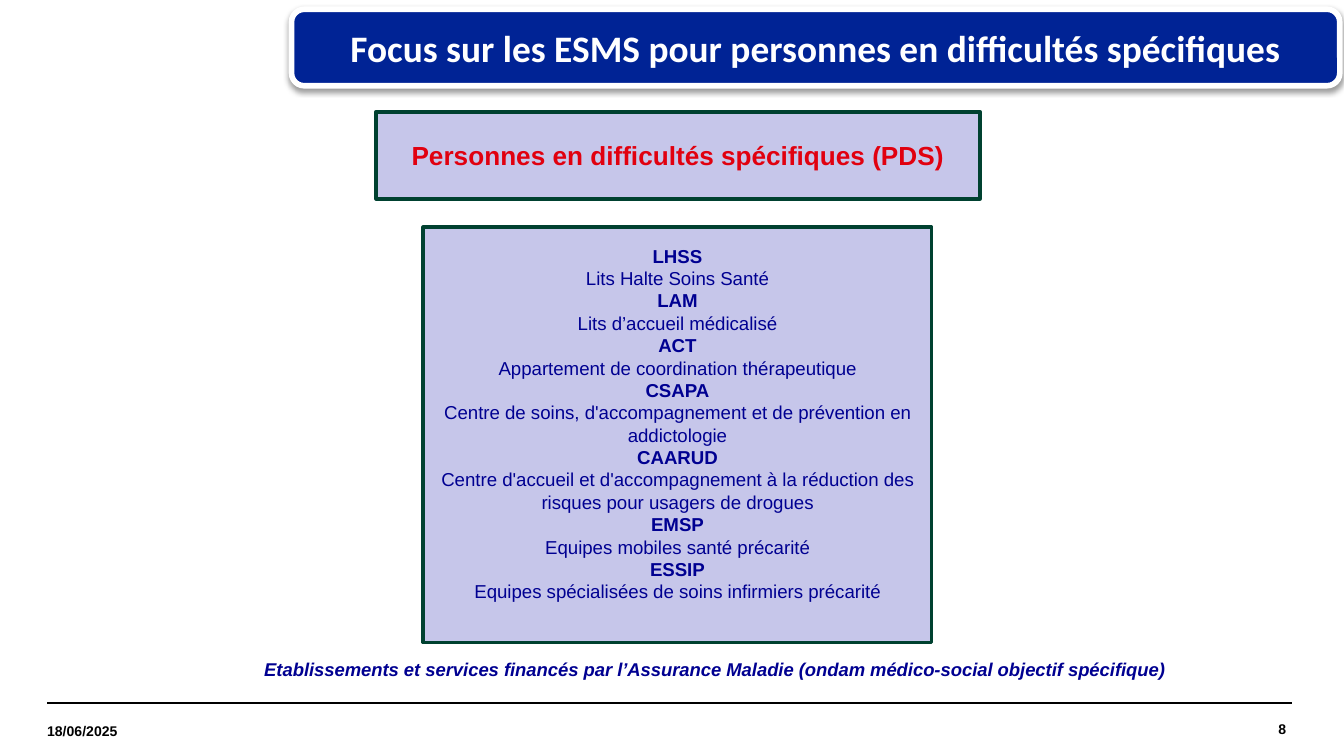
from pptx import Presentation
from pptx.dml.color import RGBColor
from pptx.enum import shapes, text
from pptx.oxml import parse_xml
from pptx.oxml.ns import nsdecls, qn
from pptx.util import Pt

THEME = {
    "font": "Arial", "title_font": "Calibri",
    "banner": "002395", "white": "FFFFFF", "panel": "C6C6EA", "border": "004130",
    "red": "E1000F", "navy": "000091", "black": "000000",
    "title": 20, "heading": 14, "body": 10, "note": 9.9, "footer": 7.5,
}
TITLE = "Focus sur les ESMS pour personnes en difficultés spécifiques"
HEADING = "Personnes en difficultés spécifiques (PDS)"
SERVICES = [
    ("LHSS", "Lits Halte Soins Santé"),
    ("LAM", "Lits d’accueil médicalisé"),
    ("ACT", "Appartement de coordination thérapeutique"),
    ("CSAPA", "Centre de soins, d'accompagnement et de prévention en addictologie"),
    ("CAARUD", "Centre d'accueil et d'accompagnement à la réduction des risques "
               "pour usagers de drogues"),
    ("EMSP", "Equipes mobiles santé précarité"),
    ("ESSIP", "Equipes spécialisées de soins infirmiers précarité"),
]
NOTE = ("Etablissements et services financés par l’Assurance Maladie "
        "(ondam médico-social objectif spécifique)")
DATE, PAGE = "18/06/2025", "8"
CENTER, LEFT, RIGHT = text.PP_ALIGN.CENTER, text.PP_ALIGN.LEFT, text.PP_ALIGN.RIGHT


def rgb(name):
    return RGBColor.from_string(THEME[name])


def write(sp, lines, size, color, align=CENTER, font="font", italic=False):
    """Fill a shape with (text, bold) lines in one style."""
    tf = sp.text_frame
    tf.word_wrap = True
    tf.vertical_anchor = text.MSO_ANCHOR.MIDDLE
    tf.text = "\n".join(line for line, _ in lines)
    for p, (_, bold) in zip(tf.paragraphs, lines):
        p.alignment = align
        for r in p.runs:
            r.font.name, r.font.size = THEME[font], Pt(THEME[size])
            r.font.bold, r.font.italic = bold, italic
            r.font.color.rgb = rgb(color)
    return tf


def add_box(slide, kind, box, fill, line, width):
    sp = slide.shapes.add_shape(kind, *map(Pt, box))
    sp.shadow.inherit = False
    sp.fill.solid()
    sp.fill.fore_color.rgb = rgb(fill)
    sp.line.color.rgb = rgb(line)
    sp.line.width = Pt(width)
    return sp


def add_text(slide, box, *args, inset=True, **style):
    sp = slide.shapes.add_textbox(*map(Pt, box))
    tf = write(sp, *args, **style)
    if not inset:
        tf.margin_left = tf.margin_right = tf.margin_top = tf.margin_bottom = 0
    return tf


def add_rule(slide, x1, x2, y):
    line = slide.shapes.add_connector(shapes.MSO_CONNECTOR.STRAIGHT, Pt(x1), Pt(y), Pt(x2), Pt(y))
    line.line.color.rgb = rgb("black")
    line.line.width = Pt(0.8)
    line._element.spPr.append(parse_xml(f"<a:effectLst {nsdecls('a')}/>"))


def add_shadow(sp):
    effects = sp._element.spPr.find(qn("a:effectLst"))
    effects.append(parse_xml(
        f'<a:outerShdw {nsdecls("a")} blurRad="{Pt(3.1)}" dist="{Pt(1.6)}" dir="5400000">'
        f'<a:srgbClr val="{THEME["black"]}"><a:alpha val="38000"/></a:srgbClr></a:outerShdw>'))


def main():
    prs = Presentation()
    prs.slide_width, prs.slide_height = Pt(720), Pt(405)
    s = prs.slides.add_slide(prs.slide_layouts[6])
    rect, rounded = shapes.MSO_SHAPE.RECTANGLE, shapes.MSO_SHAPE.ROUNDED_RECTANGLE

    for x in (25.2, 28.1):
        add_rule(s, x, x + 663.9, 376.6)
    add_text(s, (582.5, 376.6, 106.5, 28), [(PAGE, True)], "footer", "black", RIGHT, inset=False)
    add_text(s, (25.2, 378, 95, 27.4), [(DATE, True)], "footer", "black", LEFT, inset=False)
    note = add_text(s, (65.5, 350.6, 635, 28), [(NOTE, True)], "note", "navy", italic=True)
    note.margin_bottom = Pt(16)

    heading = add_box(s, rect, (201.6, 59.8, 323.3, 46.8), "panel", "border", 2)
    write(heading, [(HEADING, True)], "heading", "red")

    panel = add_box(s, rect, (226.8, 121.7, 272.2, 222.5), "panel", "border", 2)
    lines = [line for code, label in SERVICES for line in ((code, True), (label, False))]
    tf = write(panel, lines, "body", "navy")
    tf.margin_bottom = Pt(15.6)
    for p in tf.paragraphs:
        p.line_spacing = Pt(12)

    banner = add_box(s, rounded, (156.2, 5, 561.6, 41), "banner", "white", 3)
    add_shadow(banner)
    write(banner, [(TITLE, True)], "title", "white", font="title_font")
    prs.save("out.pptx")


if __name__ == "__main__":
    main()
